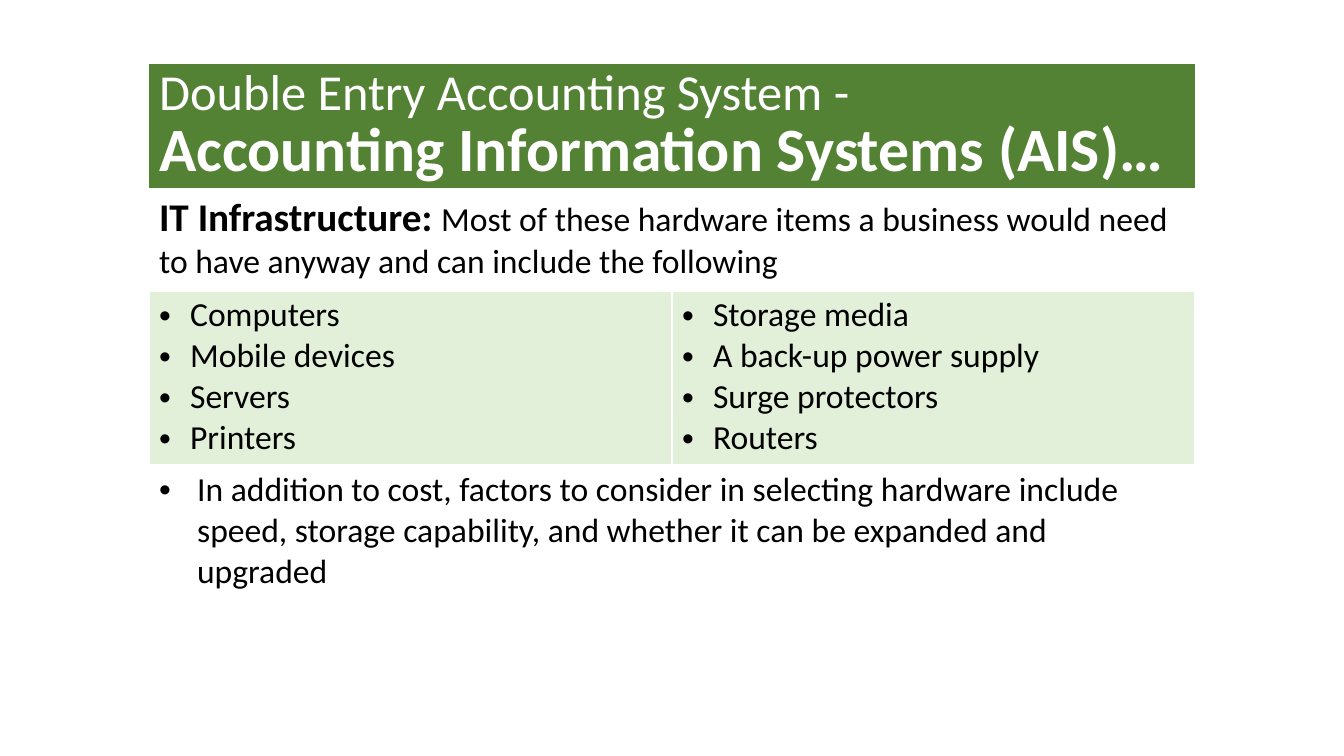
import dataclasses

import lxml.etree
import pptx
import pptx.dml.color
import pptx.enum.text
import pptx.oxml.ns
import pptx.util

EMU_PER_INCH = 914400
PX_PER_INCH = 100.8


@dataclasses.dataclass(frozen=True)
class Theme:
    font: str = "Calibri"
    white: str = "FFFFFF"
    black: str = "000000"
    title_fill: str = "548235"
    list_fill: str = "E2F0D9"
    topic_size: int = 36
    title_size: int = 44
    lead_size: int = 28
    body_size: int = 24


THEME = Theme()
LEFT, WIDTH = 149, 1046
TITLE_TOP, TITLE_HEIGHT = 64, 125
ROW_HEIGHTS = (101, 172, 128)
ITEM_INDENT, NOTE_INDENT = 31, 38

HARDWARE = (
    ("Computers", "Mobile devices", "Servers", "Printers"),
    ("Storage media", "A back-up power supply", "Surge protectors", "Routers"),
)
INTRO = "Most of these hardware items a business would need to have anyway and can\u00a0include the following"
NOTE = ("In addition to cost, factors to consider in selecting hardware include "
        "speed, storage capability, and whether it can be expanded and upgraded")


def px(n):
    return pptx.util.Emu(round(n * EMU_PER_INCH / PX_PER_INCH))


def rgb(value):
    return pptx.dml.color.RGBColor.from_string(value)


def set_fill(target, color):
    target.fill.solid()
    target.fill.fore_color.rgb = rgb(color)


def add_run(p, text, size=THEME.body_size, color=THEME.black, bold=False):
    r = p.add_run()
    r.text = text
    formats = {"name": THEME.font, "size": pptx.util.Pt(size), "bold": bold}
    for name, value in formats.items():
        setattr(r.font, name, value)
    r.font.color.rgb = rgb(color)


def add_bullets(tf, items, indent):
    for i, item in enumerate(items):
        p = tf.paragraphs[0] if i == 0 else tf.add_paragraph()
        pPr = p._p.get_or_add_pPr()
        pPr.set("marL", str(px(indent)))
        pPr.set("indent", str(-px(indent)))
        for tag, key, value in (("a:buFont", "typeface", "Arial"), ("a:buChar", "char", "•")):
            lxml.etree.SubElement(pPr, pptx.oxml.ns.qn(tag)).set(key, value)
        add_run(p, item)


def set_borders(cell, color, bottom=1):
    tcPr = cell._tc.get_or_add_tcPr()
    for i, (side, width) in enumerate(zip("LRTB", (1, 1, 1, bottom))):
        ln = lxml.etree.Element(pptx.oxml.ns.qn(f"a:ln{side}"), w=str(pptx.util.Pt(width)))
        fill = lxml.etree.SubElement(ln, pptx.oxml.ns.qn("a:solidFill"))
        lxml.etree.SubElement(fill, pptx.oxml.ns.qn("a:srgbClr")).set("val", color)
        tcPr.insert(i, ln)


def add_title(slide):
    sp = slide.shapes.title
    box = {"left": px(LEFT), "top": px(TITLE_TOP), "width": px(WIDTH), "height": px(TITLE_HEIGHT)}
    for name, value in box.items():
        setattr(sp, name, value)
    set_fill(sp, THEME.title_fill)
    tf = sp.text_frame
    frame = {"word_wrap": True, "auto_size": pptx.enum.text.MSO_AUTO_SIZE.NONE,
             "vertical_anchor": pptx.enum.text.MSO_ANCHOR.MIDDLE}
    for name, value in frame.items():
        setattr(tf, name, value)
    p = tf.paragraphs[0]
    p.alignment = pptx.enum.text.PP_ALIGN.LEFT
    p.line_spacing = 0.85
    add_run(p, "Double Entry Accounting System -", THEME.topic_size, THEME.white)
    p.add_line_break()
    add_run(p, "Accounting Information Systems (AIS)…", THEME.title_size, THEME.white, True)


def add_hardware_table(slide):
    table = slide.shapes.add_table(
        len(ROW_HEIGHTS), len(HARDWARE), px(LEFT), px(TITLE_TOP + TITLE_HEIGHT),
        px(WIDTH), px(sum(ROW_HEIGHTS))).table
    table.first_row = table.horz_banding = False
    for row, height in zip(table.rows, ROW_HEIGHTS):
        row.height = px(height)

    # Fills and borders
    row_fills = (THEME.white, THEME.list_fill, THEME.white)
    for i, (row, color) in enumerate(zip(table.rows, row_fills)):
        for cell in row.cells:
            set_fill(cell, color)
            set_borders(cell, THEME.white, bottom=3 if i == 0 else 1)

    # Introduction and closing note span both columns
    for i in (0, 2):
        table.cell(i, 0).merge(table.cell(i, 1))
    p = table.cell(0, 0).text_frame.paragraphs[0]
    add_run(p, "IT Infrastructure: ", THEME.lead_size, bold=True)
    add_run(p, INTRO)
    add_bullets(table.cell(2, 0).text_frame, [NOTE], NOTE_INDENT)

    # Hardware lists
    for i, items in enumerate(HARDWARE):
        add_bullets(table.cell(1, i).text_frame, items, ITEM_INDENT)


def main():
    prs = pptx.Presentation()
    prs.slide_width, prs.slide_height = px(1344), px(756)
    slide = prs.slides.add_slide(prs.slide_layouts[5])
    add_title(slide)
    add_hardware_table(slide)
    prs.save("out.pptx")


if __name__ == "__main__":
    main()
